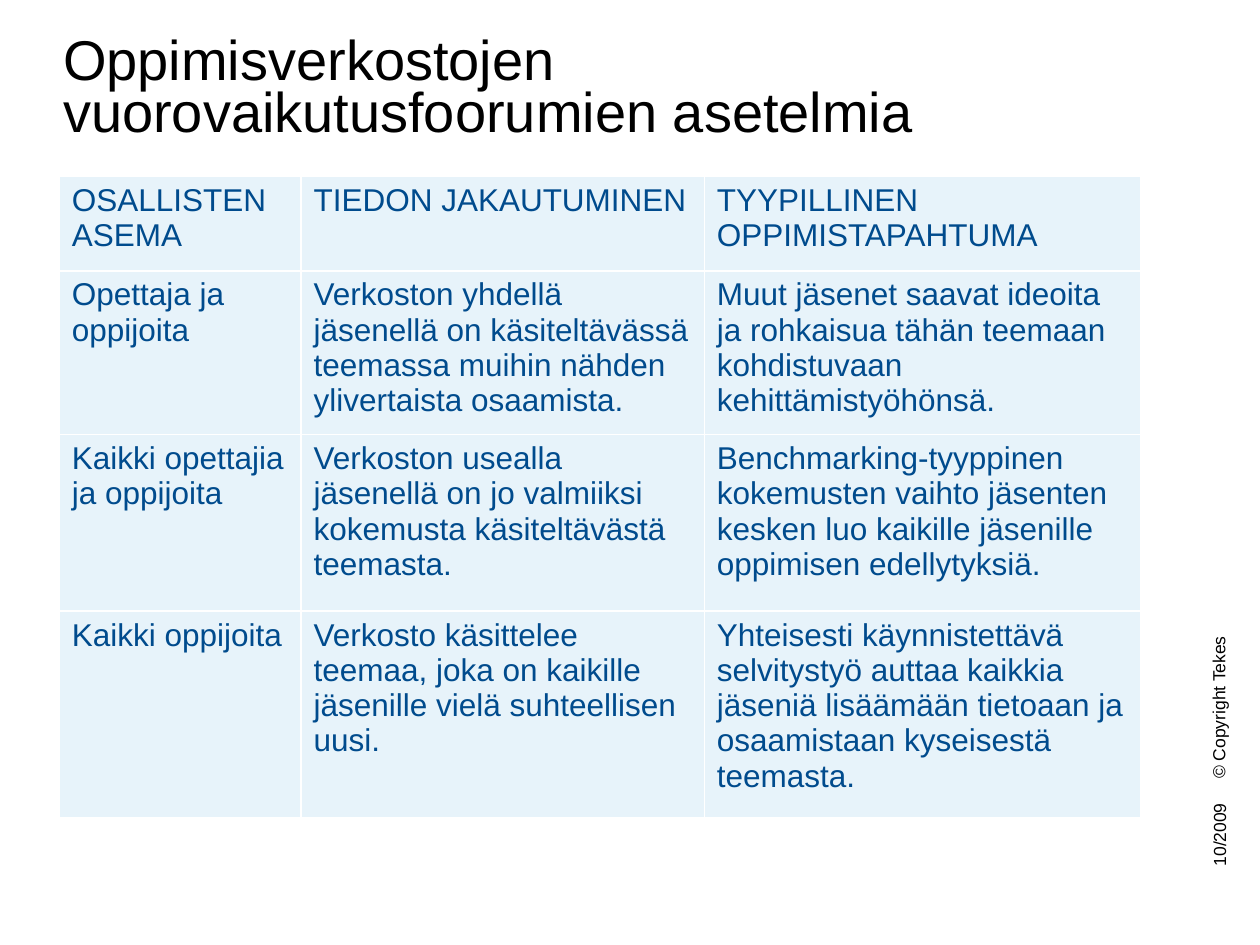
from lxml import etree
from pptx import Presentation
from pptx import util as u
from pptx.dml.color import RGBColor
from pptx.enum import text
from pptx.oxml import ns

PX = 9144
FONT = "Arial"
BLACK = RGBColor(0x00, 0x00, 0x00)
NAVY = RGBColor(0x00, 0x4B, 0x8D)
PALE = RGBColor(0xE7, 0xF3, 0xFA)
WHITE = RGBColor(0xFF, 0xFF, 0xFF)

TITLE = "Oppimisverkostojen vuorovaikutusfoorumien asetelmia"
COLUMNS = [192, 320, 346]
ROWS = [
    (75, ["OSALLISTEN ASEMA", "TIEDON JAKAUTUMINEN", "TYYPILLINEN OPPIMISTAPAHTUMA"]),
    (128, [
        "Opettaja ja oppijoita",
        "Verkoston yhdellä jäsenellä on käsiteltävässä teemassa muihin nähden "
        "ylivertaista osaamista.",
        "Muut jäsenet saavat ideoita ja rohkaisua tähän teemaan kohdistuvaan "
        "kehittämistyöhönsä.",
    ]),
    (140, [
        "Kaikki opettajia ja oppijoita",
        "Verkoston usealla jäsenellä on jo valmiiksi kokemusta käsiteltävästä teemasta.",
        "Benchmarking-tyyppinen kokemusten vaihto jäsenten kesken luo kaikille "
        "jäsenille oppimisen edellytyksiä.",
    ]),
    (164, [
        "Kaikki oppijoita",
        "Verkosto käsittelee teemaa, joka on kaikille jäsenille vielä suhteellisen uusi.",
        "Yhteisesti käynnistettävä selvitystyö auttaa kaikkia jäseniä lisäämään "
        "tietoaan ja osaamistaan kyseisestä teemasta.",
    ]),
]


def px(*lengths):
    """Turn px lengths into EMU."""
    return [u.Emu(length * PX) for length in lengths]


def write(frame, words, size, color, spacing=None):
    """Write one formatted paragraph into a text frame."""
    para = frame.paragraphs[0]
    if spacing:
        para.line_spacing = u.Pt(spacing)
    span = para.add_run()
    span.text = words
    span.font.name = FONT
    span.font.size = u.Pt(size)
    span.font.color.rgb = color


def add_label(page, bounds, words, anchor=text.MSO_ANCHOR.TOP, wrap=True, turn=0, **style):
    """Add a text box without margins."""
    box = page.shapes.add_textbox(*px(*bounds))
    box.rotation = turn
    frame = box.text_frame
    frame.word_wrap = wrap
    frame.vertical_anchor = anchor
    frame.margin_left = frame.margin_top = frame.margin_right = frame.margin_bottom = 0
    write(frame, words, **style)


def add_borders(cell, color, width):
    """Draw a solid line on all four sides of a cell."""
    properties = cell._tc.get_or_add_tcPr()
    for side in ("a:lnL", "a:lnR", "a:lnT", "a:lnB"):
        line = etree.SubElement(properties, ns.qn(side), w=str(u.Pt(width)))
        fill = etree.SubElement(line, ns.qn("a:solidFill"))
        etree.SubElement(fill, ns.qn("a:srgbClr"), val=str(color))


def add_forum_table(page, left, top):
    """Add the table of forum settings with its corner at left, top."""
    size = sum(COLUMNS), sum(height for height, _ in ROWS)
    table = page.shapes.add_table(len(ROWS), len(COLUMNS), *px(left, top, *size)).table
    table.first_row = table.horz_banding = False
    for column, width in zip(table.columns, px(*COLUMNS)):
        column.width = width
    for row, (height, entries) in zip(table.rows, ROWS):
        row.height = px(height)[0]
        for cell, words in zip(row.cells, entries):
            add_borders(cell, WHITE, 1)
            cell.fill.solid()
            cell.fill.fore_color.rgb = PALE
            write(cell.text_frame, words, size=18, color=NAVY)


def add_side_notes(page, center, bottom):
    """Stack the date and copyright line upwards along a vertical axis."""
    height = 20
    for words, length, gap in (("10/2009", 63, 0), ("© Copyright Tekes", 122, 6)):
        bottom -= gap
        bounds = (center - length // 2, bottom - (length + height) // 2, length, height)
        add_label(page, bounds, words, anchor=text.MSO_ANCHOR.MIDDLE, wrap=False,
                  turn=270, size=10, color=BLACK)
        bottom -= length


def main():
    """Build and save the deck."""
    deck = Presentation()
    deck.slide_width, deck.slide_height = px(1000, 750)
    page = deck.slides.add_slide(deck.slide_layouts[6])
    add_label(page, (50, 31, 858, 102), TITLE, size=32, color=BLACK, spacing=30)
    add_forum_table(page, 47, 140)
    add_side_notes(page, 967, 687)
    deck.save("out.pptx")


if __name__ == "__main__":
    main()
